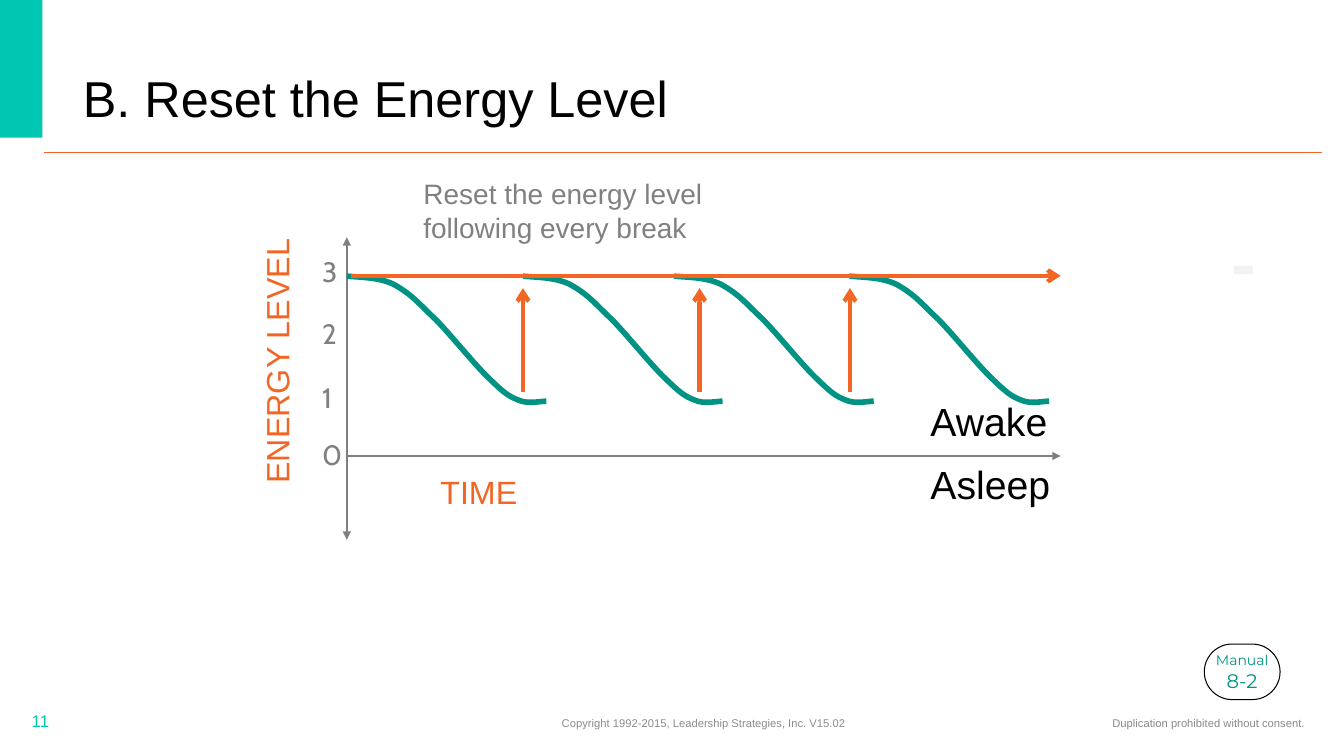
import pptx
import pptx.util
import pptx.dml.color
import pptx.enum.shapes
import pptx.enum.text
import pptx.oxml.ns
from lxml import etree

Cm = pptx.util.Cm
Pt = pptx.util.Pt
qn = pptx.oxml.ns.qn
SHAPES = pptx.enum.shapes.MSO_SHAPE
ALIGN = pptx.enum.text.PP_ALIGN
ANCHOR = pptx.enum.text.MSO_ANCHOR
AUTO = pptx.enum.text.MSO_AUTO_SIZE

COLORS = {
    "mint": "00C7B1", "teal": "009383", "orange": "F26522", "gray": "808080",
    "black": "000000", "white": "FFFFFF", "pale": "F2F2F2",
    "notice": "898989", "copyright": "8C8C8C",
}

CURVE_TOP = 6.96
CURVE_STARTS = (8.74, 13.18, 16.99, 21.41)
CURVE_POINTS = (
    (0.36, 0.03), (0.81, 0.03), (1.17, 0.2),
    (1.65, 0.46), (1.83, 0.71), (2.24, 1.09),
    (2.64, 1.5), (3.23, 2.24), (3.58, 2.57),
    (3.94, 2.92), (4.06, 3.02), (4.32, 3.12),
    (4.55, 3.23), (4.88, 3.15), (5.03, 3.15),
)
RESET_ARROWS = (13.18, 17.63, 21.42)
LEVELS = (("1", 9.47), ("2", 7.85), ("3", 6.3), ("0", 10.9))


def rgb(name):
    return pptx.dml.color.RGBColor.from_string(COLORS[name])


def style_run(r, size, color, font="Arial", bold=False):
    r.font.size = Pt(size)
    r.font.name = font
    r.font.bold = bold
    r.font.color.rgb = rgb(color)


def add_text(s, text, box, size, color, font="Arial", align=ALIGN.LEFT,
             anchor=ANCHOR.TOP, wrap=True, grow=False, bold=False):
    sp = s.shapes.add_textbox(*map(Cm, box))
    tf = sp.text_frame
    tf.word_wrap = wrap
    tf.auto_size = AUTO.SHAPE_TO_FIT_TEXT if grow else AUTO.NONE
    tf.vertical_anchor = anchor
    tf.text = text
    p = tf.paragraphs[0]
    p.alignment = align
    style_run(p.runs[0], size, color, font, bold)
    return sp


def add_label(s, text, box, size, color, **options):
    return add_text(s, text, box, size, color, wrap=False, grow=True, **options)


def add_line(s, start, end, color, width, head=None, tail=None):
    ends = map(Cm, (*start, *end))
    cx = s.shapes.add_connector(pptx.enum.shapes.MSO_CONNECTOR.STRAIGHT, *ends)
    cx.line.color.rgb = rgb(color)
    cx.line.width = Pt(width)
    ln = cx.line._get_or_add_ln()
    for tag, kind in (("a:headEnd", head), ("a:tailEnd", tail)):
        if kind:
            etree.SubElement(ln, qn(tag), type=kind)
    etree.SubElement(cx._element.spPr, qn("a:effectLst"))


def add_block(s, kind, box, fill):
    sp = s.shapes.add_shape(kind, *map(Cm, box))
    sp.shadow.inherit = False
    sp.fill.solid()
    sp.fill.fore_color.rgb = rgb(fill)
    sp.line.fill.background()
    return sp


def bend_segments(sp):
    lines = list(sp._element.iter(qn("a:lnTo")))
    for first, second, third in zip(lines[::3], lines[1::3], lines[2::3]):
        bezier = etree.Element(qn("a:cubicBezTo"))
        first.addprevious(bezier)
        for line in (first, second, third):
            bezier.append(line[0])
            line.getparent().remove(line)


def add_energy_curve(s, left):
    fb = s.shapes.build_freeform(Cm(left), Cm(CURVE_TOP))
    fb.add_line_segments([(Cm(left + x), Cm(CURVE_TOP + y))
                          for x, y in CURVE_POINTS], close=False)
    sp = fb.convert_to_shape()
    bend_segments(sp)
    sp.shadow.inherit = False
    sp.fill.background()
    sp.line.color.rgb = rgb("teal")
    sp.line.width = Pt(4)


def add_badge(s, box):
    sp = add_block(s, SHAPES.ROUNDED_RECTANGLE, box, "white")
    sp.adjustments[0] = 0.5
    sp.line.color.rgb = rgb("black")
    sp.line.width = Pt(0.75)
    tf = sp.text_frame
    tf.word_wrap = False
    tf.vertical_anchor = ANCHOR.MIDDLE
    p = tf.paragraphs[0]
    p.text = "Manual\v8-2"
    p.alignment = ALIGN.CENTER
    for r, size in zip(p.runs, (10, 14)):
        style_run(r, size, "teal", "Montserrat")


def add_frame(s):
    add_text(s, "Duplication prohibited without consent.", (18.84, 17.72, 14.3, 1.02),
             8, "notice", align=ALIGN.RIGHT, anchor=ANCHOR.MIDDLE)
    add_block(s, SHAPES.RECTANGLE, (-0.05, -0.05, 1.12, 3.52), "mint")
    add_line(s, (1.12, 3.84), (33.32, 3.84), "orange", 0.5)
    title = add_text(s, "B. Reset the Energy Level", (1.84, 1.43, 20.62, 1.93),
                     36, "black", anchor=ANCHOR.BOTTOM)
    title.text_frame.paragraphs[0].line_spacing = 0.9
    add_text(s, "11", (0.55, 17.65, 7.62, 1.02), 12, "mint", anchor=ANCHOR.MIDDLE)
    add_text(s, "Copyright 1992-2015, Leadership Strategies, Inc. V15.02",
             (9.15, 17.72, 17.17, 1.02), 8, "copyright",
             align=ALIGN.CENTER, anchor=ANCHOR.MIDDLE)


def add_energy_chart(s):
    add_line(s, (8.74, 13.6), (8.74, 5.98), "gray", 1.25, "triangle", "triangle")
    add_label(s, "TIME", (10.84, 11.79, 2.46, 1.24), 23, "orange", align=ALIGN.CENTER)
    energy = add_label(s, "ENERGY LEVEL", (3.61, 8.48, 6.73, 1.24), 23, "orange",
                       align=ALIGN.CENTER)
    energy.rotation = 270
    for level, top in LEVELS:
        add_label(s, level, (7.87, top, 0.94, 1.12), 20, "gray", font="Cabin")
    add_label(s, "Awake", (23.2, 9.88, 3.48, 1.45), 28, "black")
    add_label(s, "Asleep", (23.2, 11.48, 3.56, 1.45), 28, "black")
    add_line(s, (8.74, 11.49), (26.73, 11.49), "gray", 1.25, tail="triangle")
    add_text(s, "Reset the energy level following every break",
             (10.42, 4.33, 9.07, 1.96), 20, "gray", grow=True)
    for left, arrow in zip(CURVE_STARTS, (None, *RESET_ARROWS)):
        if arrow:
            add_line(s, (arrow, 9.88), (arrow, 7.26), "orange", 3, tail="arrow")
        add_energy_curve(s, left)
    add_line(s, (8.84, 6.95), (26.73, 6.95), "orange", 3, tail="arrow")


def main():
    prs = pptx.Presentation()
    prs.slide_width = Cm(33.87)
    prs.slide_height = Cm(19.05)
    s = prs.slides.add_slide(prs.slide_layouts[6])
    add_frame(s)
    add_energy_chart(s)
    add_badge(s, (30.35, 16.23, 1.91, 1.4))
    add_label(s, "-", (30.76, 5.49, 1.09, 2.31), 48, "pale", font="Montserrat", bold=True)
    prs.save("out.pptx")


if __name__ == "__main__":
    main()
